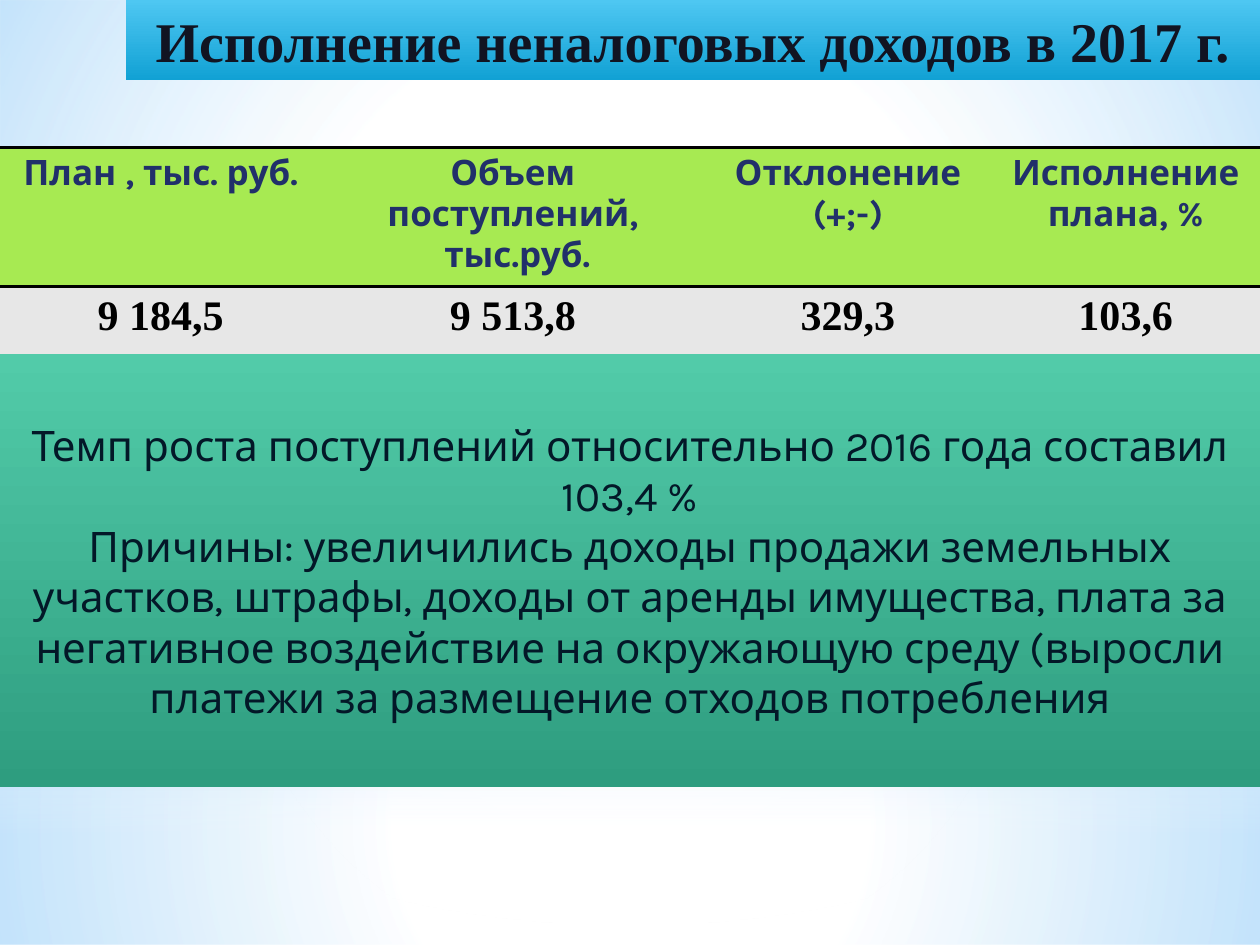
from lxml import etree
from pptx import Presentation
from pptx.dml.color import RGBColor
from pptx.enum import shapes, text
from pptx.oxml import ns
from pptx.util import Pt

# Content
TITLE = "Исполнение неналоговых доходов в 2017 г."
HEADS = ["План , тыс. руб.", "Объем поступлений,\n тыс.руб.",
         "Отклонение (+;-)", "Исполнение плана, %"]
VALUES = ["9 184,5", "9 513,8", "329,3", "103,6"]
NOTES = [
    "Темп роста поступлений относительно 2016 года составил 103,4 %",
    "Причины: увеличились доходы продажи земельных участков, штрафы, "
    "доходы от аренды имущества, плата за негативное воздействие на "
    "окружающую среду (выросли платежи за размещение отходов потребления",
]

# Layout in points
WIDE, HIGH = 720, 540
COLS = [183.6, 218.9, 164.1, 153.4]
ROWS = [("A7EA52", 79.7, HEADS, ("Karla", 20, "21306A", True)),
        ("E7E7E7", 57.6, VALUES, ("Times New Roman", 24, "000000", True))]

# Backdrop: preset, box, stops (position, colour, opacity), radial
RECT, OVAL = shapes.MSO_SHAPE.RECTANGLE, shapes.MSO_SHAPE.OVAL
SKY, WHITE = "B4DCFA", "FFFFFF"
BACK = [
    (RECT, (0, 402, WIDE, 138),
     [(0, WHITE, 91), (37, WHITE, 76), (100, SKY, 79)], True),
    (RECT, (0, 0, WIDE, 402),
     [(0, WHITE, 89), (48, WHITE, 62), (100, SKY, 79)], True),
    (RECT, (0, 297, WIDE, 180),
     [(0, WHITE, 0), (29, WHITE, 30), (45, SKY, 40), (55, WHITE, 26),
      (65, SKY, 60), (100, WHITE, 0)], False),
    (OVAL, (0, 126, WIDE, 402), [(0, WHITE, 100), (56, WHITE, 0)], True),
]


def color(code):
    return RGBColor.from_string(code)


def node(parent, tag, **attrs):
    return etree.SubElement(parent, ns.qn(tag),
                            {k: str(v) for k, v in attrs.items()})


def shade(shape, stops, radial=False):
    """Fill a shape with a vertical or radial gradient."""
    shape.fill.background()
    prop = shape.fill._xPr
    grad = etree.Element(ns.qn("a:gradFill"), rotWithShape="1")
    stop_list = node(grad, "a:gsLst")
    for pos, code, alpha in stops:
        stop = node(stop_list, "a:gs", pos=pos * 1000)
        tint = node(stop, "a:srgbClr", val=code)
        if alpha < 100:
            node(tint, "a:alpha", val=alpha * 1000)
    if radial:
        focus = node(grad, "a:path", path="circle")
        node(focus, "a:fillToRect", l=50000, t=50000, r=50000, b=50000)
    else:
        node(grad, "a:lin", ang=5400000, scaled=0)
    prop.replace(prop.find(ns.qn("a:noFill")), grad)


def add_box(kind, box, stops, radial=False):
    shape = slide.shapes.add_shape(kind, *map(Pt, box))
    shape.shadow.inherit = False
    shape.line.fill.background()
    shade(shape, stops, radial)
    return shape


def write(frame, words, font, size, code, bold):
    frame.text = words
    for para in frame.paragraphs:
        para.alignment = text.PP_ALIGN.CENTER
        for run in para.runs:
            run.font.name, run.font.size = font, Pt(size)
            run.font.bold = bold
            run.font.color.rgb = color(code)


def rule(cell, sides):
    """Draw black rules on the given cell sides."""
    prop = cell._tc.get_or_add_tcPr()
    for i, side in enumerate(sides):
        line = etree.Element(ns.qn("a:ln" + side), w=str(Pt(2)))
        node(node(line, "a:solidFill"), "a:srgbClr", val="000000")
        prop.insert(i, line)


deck = Presentation()
deck.slide_width, deck.slide_height = Pt(WIDE), Pt(HIGH)
slide = deck.slides.add_slide(deck.slide_layouts[5])

# Backdrop
for part in BACK:
    add_box(*part)

# Title, raised above the backdrop
title = slide.shapes.title
title.left, title.top, title.width, title.height = map(Pt, (72, 0, 648, 46))
shade(title, [(0, "4EC7F2", 100), (100, "11A1D4", 100)])
write(title.text_frame, TITLE, "Times New Roman", 32, "111422", True)
title.text_frame.auto_size = text.MSO_AUTO_SIZE.NONE
title.text_frame.vertical_anchor = text.MSO_ANCHOR.MIDDLE
slide.shapes._spTree.append(title._element)

# Table
total = sum(row[1] for row in ROWS)
frame = slide.shapes.add_table(len(ROWS), len(COLS), Pt(0), Pt(84.2),
                               Pt(WIDE), Pt(total))
table = frame.table
table.first_row = table.horz_banding = False
style = table._tbl.tblPr.find(ns.qn("a:tableStyleId"))
style.text = "{2D5ABB26-0587-4C30-8999-92F81FD0307C}"
for col, width in zip(table.columns, COLS):
    col.width = Pt(width)
for r, (back, height, words, look) in enumerate(ROWS):
    table.rows[r].height = Pt(height)
    for c, word in enumerate(words):
        cell = table.cell(r, c)
        write(cell.text_frame, word, *look)
        cell.fill.solid()
        cell.fill.fore_color.rgb = color(back)
        rule(cell, "TB")

# Notes panel
panel = add_box(RECT, (0, 202.3, WIDE, 247.7),
                [(0, "52CBA9", 100), (100, "2E9D7F", 100)])
panel.text_frame.word_wrap = True
panel.text_frame.vertical_anchor = text.MSO_ANCHOR.MIDDLE
write(panel.text_frame, "\n".join(NOTES), "Karla", 24, "031828", False)

deck.save("out.pptx")
